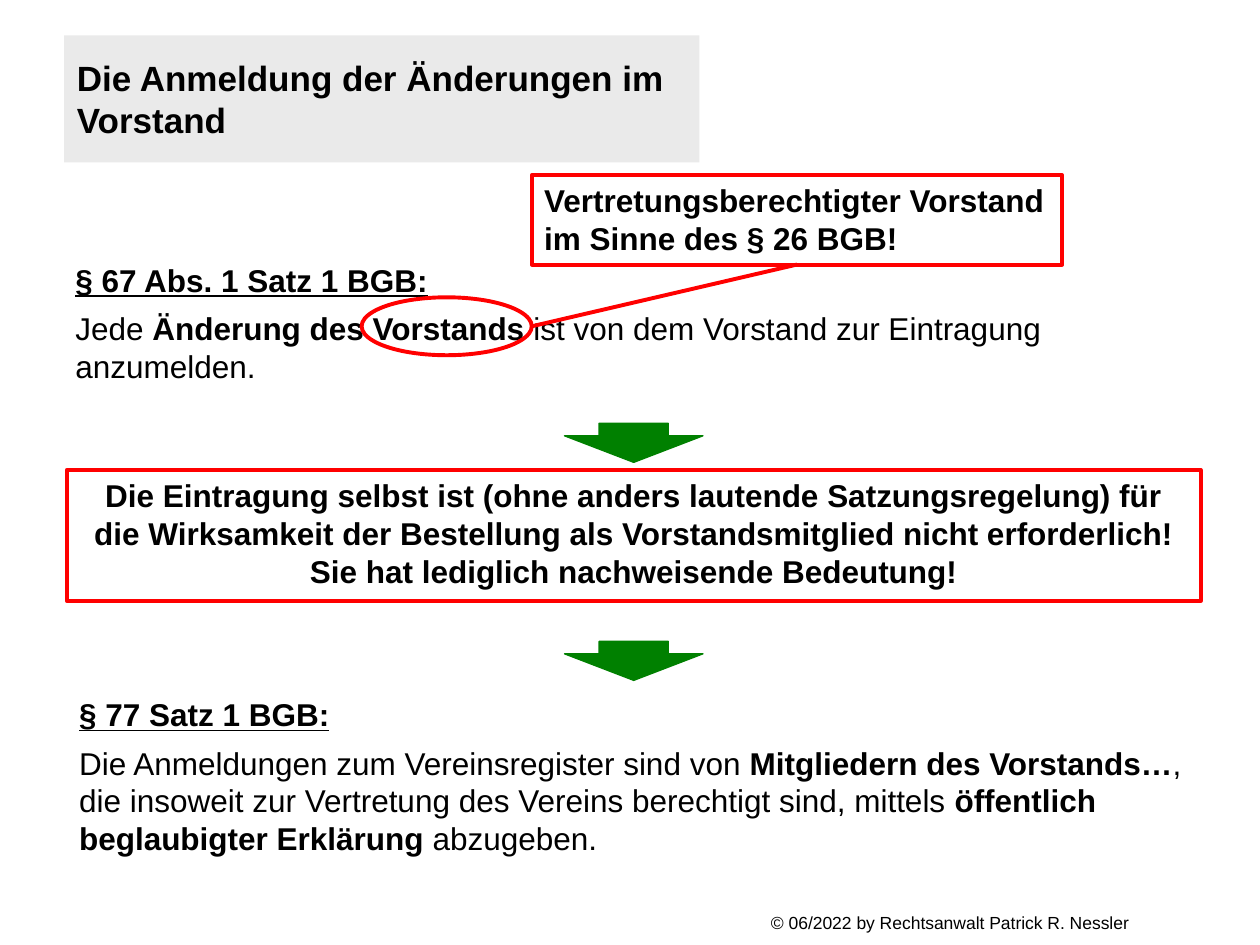
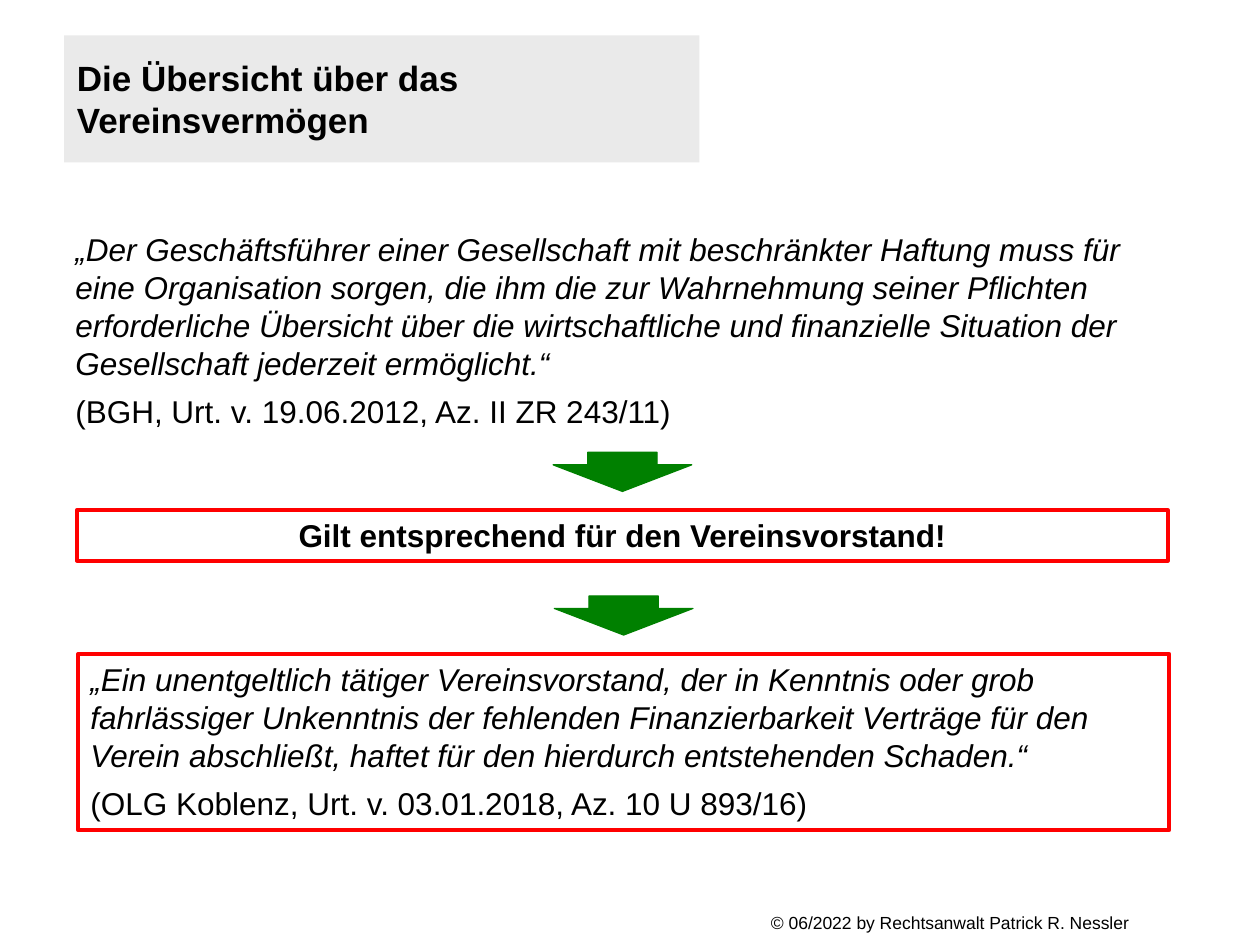
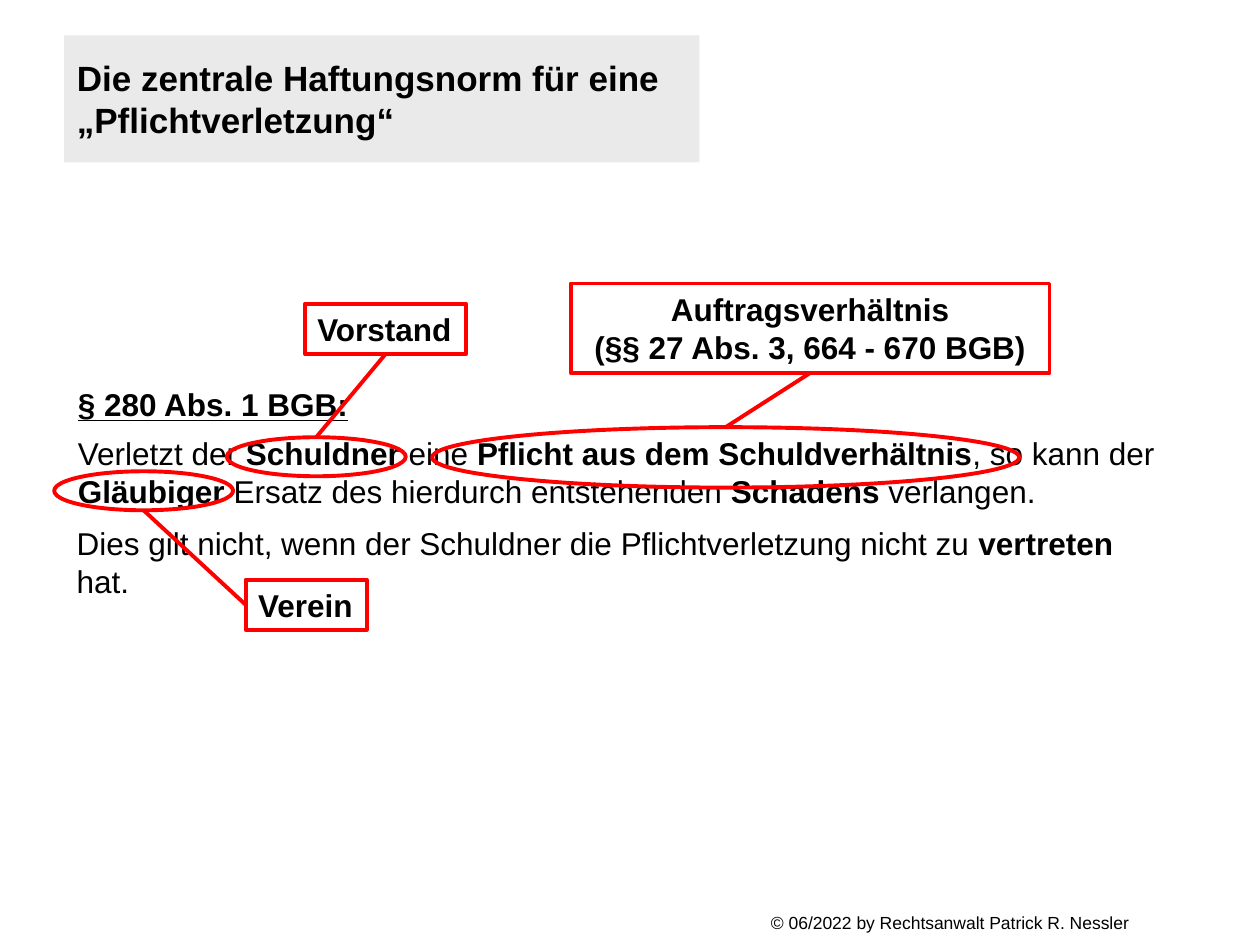
from dataclasses import dataclass

from lxml import etree
from pptx import Presentation
from pptx.dml.color import RGBColor
from pptx.enum.shapes import MSO_CONNECTOR, MSO_SHAPE
from pptx.enum.text import MSO_ANCHOR, MSO_AUTO_SIZE, PP_ALIGN
from pptx.oxml.ns import qn
from pptx.util import Inches, Pt

RECTANGLE, ELLIPSE, DOWN_ARROW = MSO_SHAPE.RECTANGLE, MSO_SHAPE.OVAL, MSO_SHAPE.DOWN_ARROW
STRAIGHT = MSO_CONNECTOR.STRAIGHT
LEFT, CENTER = PP_ALIGN.LEFT, PP_ALIGN.CENTER
TOP, MIDDLE = MSO_ANCHOR.TOP, MSO_ANCHOR.MIDDLE
NO_AUTOFIT = MSO_AUTO_SIZE.NONE
TITLE_ONLY = 5


@dataclass(frozen=True)
class Theme:
    font: str = "Arial"
    text: RGBColor = RGBColor(0, 0, 0)
    band: RGBColor = RGBColor(0xEA, 0xEA, 0xEA)
    accent: RGBColor = RGBColor(0xFF, 0, 0)
    arrow: RGBColor = RGBColor(0, 0x80, 0)
    title_size: int = 20
    body_size: int = 18
    footer_size: int = 10
    accent_width: float = 2.25
    arrow_width: float = 0.75
    paragraph_gap: int = 6


THEME = Theme()


@dataclass(frozen=True)
class Box:
    left: float
    top: float
    width: float
    height: float

    def inches(self):
        return [Inches(v) for v in (self.left, self.top, self.width, self.height)]

    def point(self, side):
        """Middle of one side of the box."""
        across, down = {"top": (0.5, 0), "bottom": (0.5, 1),
                        "left": (0, 0.5), "right": (1, 0.5)}[side]
        return self.left + across * self.width, self.top + down * self.height


TITLE_BOX = Box(0.51, 0.28, 5.04, 1.01)
FOOTER_BOX = Box(6.02, 7.19, 3.88, 0.27)
ARROW_WIDTH, ARROW_HEIGHT = 1.1, 0.31


# Text: a paragraph is a list of (text, styles) runs; styles are letters of "biu"
def write_text(frame, paragraphs, size=THEME.body_size, align=LEFT, anchor=TOP, wrap=True):
    frame.word_wrap = wrap
    frame.auto_size = NO_AUTOFIT
    frame.vertical_anchor = anchor
    for index, runs in enumerate(paragraphs):
        paragraph = frame.paragraphs[0] if index == 0 else frame.add_paragraph()
        paragraph.alignment = align
        paragraph.space_before = Pt(0)
        if index < len(paragraphs) - 1:
            paragraph.space_after = Pt(THEME.paragraph_gap)
        for text, styles in runs:
            for line_index, line in enumerate(text.split("\n")):
                if line_index:
                    paragraph.add_line_break()
                run = paragraph.add_run()
                run.text = line
                run.font.name = THEME.font
                run.font.size = Pt(size)
                run.font.color.rgb = THEME.text
                run.font.bold = "b" in styles
                run.font.italic = "i" in styles
                run.font.underline = "u" in styles


def add_text(slide, box, paragraphs, **options):
    write_text(slide.shapes.add_textbox(*box.inches()).text_frame, paragraphs, **options)


# Shapes
def add_outline(slide, kind, box):
    shape = slide.shapes.add_shape(kind, *box.inches())
    shape.shadow.inherit = False
    shape.fill.background()
    shape.line.color.rgb = THEME.accent
    shape.line.width = Pt(THEME.accent_width)
    return shape


def add_framed_text(slide, box, paragraphs, **options):
    write_text(add_outline(slide, RECTANGLE, box).text_frame, paragraphs, **options)


def add_arrow_above(slide, box, gap):
    """Down arrow centred over a box."""
    center, top = box.point("top")
    arrow_box = Box(center - ARROW_WIDTH / 2, top - gap - ARROW_HEIGHT,
                    ARROW_WIDTH, ARROW_HEIGHT)
    arrow = slide.shapes.add_shape(DOWN_ARROW, *arrow_box.inches())
    arrow.shadow.inherit = False
    arrow.adjustments[0] = 0.5
    arrow.adjustments[1] = 0.68
    arrow.fill.solid()
    arrow.fill.fore_color.rgb = THEME.arrow
    arrow.line.color.rgb = THEME.arrow
    arrow.line.width = Pt(THEME.arrow_width)


def add_callout(slide, term, term_side, label, label_side, text, **options):
    """Circle a term and join it to a framed label."""
    add_outline(slide, ELLIPSE, term)
    add_framed_text(slide, label, [[(text, "b")]], **options)
    ends = (*term.point(term_side), *label.point(label_side))
    connector = slide.shapes.add_connector(STRAIGHT, *[Inches(v) for v in ends])
    connector.line.color.rgb = THEME.accent
    connector.line.width = Pt(THEME.accent_width)
    etree.SubElement(connector._element.spPr, qn("a:effectLst"))


# Shared slide parts: title band and footer
def add_titled_slide(presentation, title):
    slide = presentation.slides.add_slide(presentation.slide_layouts[TITLE_ONLY])
    shape = slide.shapes.title
    shape.left, shape.top, shape.width, shape.height = TITLE_BOX.inches()
    shape.fill.solid()
    shape.fill.fore_color.rgb = THEME.band
    write_text(shape.text_frame, [[(title, "b")]], size=THEME.title_size, anchor=MIDDLE)
    add_text(slide, FOOTER_BOX, [[("© 06/2022 by Rechtsanwalt Patrick R. Nessler", "")]],
             size=THEME.footer_size)
    return slide


def build_registration_slide(presentation):
    slide = add_titled_slide(presentation, "Die Anmeldung der Änderungen im Vorstand")
    add_text(slide, Box(0.5, 2.02, 9, 1.18), [
        [("§ 67 Abs. 1 Satz 1 BGB:", "bu")],
        [("Jede ", ""), ("Änderung des Vorstands ", "b"),
         ("ist von dem Vorstand zur Eintragung anzumelden.", "")],
    ])

    # Effect of the entry
    effect = Box(0.53, 3.73, 9, 1.04)
    add_framed_text(slide, effect, [[(
        "Die Eintragung selbst ist (ohne anders lautende Satzungsregelung) für die "
        "Wirksamkeit der Bestellung als Vorstandsmitglied nicht erforderlich! "
        "Sie hat lediglich nachweisende Bedeutung!", "b")]], align=CENTER)
    add_arrow_above(slide, effect, 0.06)

    # Form of the application
    form = Box(0.53, 5.47, 9, 1.43)
    add_text(slide, form, [
        [("§ 77 Satz 1 BGB:", "bu")],
        [("Die Anmeldungen zum Vereinsregister sind von ", ""),
         ("Mitgliedern des Vorstands…", "b"),
         (", die insoweit zur Vertretung des Vereins berechtigt sind, mittels ", ""),
         ("öffentlich beglaubigter Erklärung ", "b"), ("abzugeben.", "")],
    ])
    add_arrow_above(slide, form, 0.07)

    add_callout(slide, Box(2.87, 2.36, 1.35, 0.46), "right",
                Box(4.22, 1.39, 4.21, 0.71), "bottom",
                "Vertretungsberechtigter Vorstand\nim Sinne des § 26 BGB!", wrap=False)


def build_assets_slide(presentation):
    slide = add_titled_slide(presentation, "Die Übersicht über das Vereinsvermögen")
    add_text(slide, Box(0.5, 1.78, 9, 1.47), [
        [("„Der Geschäftsführer einer Gesellschaft mit beschränkter Haftung muss für eine "
          "Organisation sorgen, die ihm die zur Wahrnehmung seiner Pflichten erforderliche "
          "Übersicht über die wirtschaftliche und finanzielle Situation der Gesellschaft "
          "jederzeit ermöglicht.“", "i")],
        [("(BGH, Urt. v. 19.06.2012, Az. II ZR 243/11)", "")],
    ])

    # Conclusion and liability ruling
    conclusion = Box(0.61, 4.05, 8.66, 0.4)
    add_framed_text(slide, conclusion,
                    [[("Gilt entsprechend für den Vereinsvorstand!", "b")]], align=CENTER)
    ruling = Box(0.62, 5.19, 8.66, 1.4)
    add_framed_text(slide, ruling, [
        [("„Ein unentgeltlich tätiger Vereinsvorstand, der in Kenntnis oder grob fahrlässiger "
          "Unkenntnis der fehlenden Finanzierbarkeit Verträge für den Verein abschließt, "
          "haftet für den hierdurch entstehenden Schaden.“", "i")],
        [("(OLG Koblenz, Urt. v. 03.01.2018, Az. 10 U 893/16)", "")],
    ])
    for box in (conclusion, ruling):
        add_arrow_above(slide, box, 0.15)


def build_liability_slide(presentation):
    slide = add_titled_slide(presentation,
                             "Die zentrale Haftungsnorm für eine „Pflichtverletzung“")
    add_text(slide, Box(0.52, 3.01, 8.83, 1.09), [
        [("§ 280 Abs. 1 BGB:", "bu")],
        [("Verletzt der ", ""), ("Schuldner ", "b"), ("eine ", ""),
         ("Pflicht aus dem Schuldverhältnis", "b"), (", so kann der ", ""),
         ("Gläubiger ", "b"), ("Ersatz des hierdurch entstehenden ", ""),
         ("Schadens ", "b"), ("verlangen.", "")],
    ])
    add_text(slide, Box(0.51, 4.11, 8.83, 0.71), [
        [("Dies gilt nicht, wenn der Schuldner die Pflichtverletzung nicht zu ", ""),
         ("vertreten", "b"), (" hat.", "")],
    ])

    # Terms of the norm and what they stand for
    add_callout(slide, Box(3.43, 3.39, 4.66, 0.48), "top",
                Box(4.53, 2.25, 3.8, 0.71), "bottom",
                "Auftragsverhältnis\n(§§ 27 Abs. 3, 664 - 670 BGB)", align=CENTER)
    add_callout(slide, Box(1.8, 3.47, 1.42, 0.31), "top",
                Box(2.42, 2.41, 1.28, 0.4), "bottom", "Vorstand", wrap=False)
    add_callout(slide, Box(0.43, 3.74, 1.42, 0.31), "bottom",
                Box(1.95, 4.6, 0.96, 0.4), "left", "Verein", wrap=False)


def main():
    presentation = Presentation()
    presentation.slide_width = Inches(10)
    presentation.slide_height = Inches(7.5)
    build_registration_slide(presentation)
    build_assets_slide(presentation)
    build_liability_slide(presentation)
    presentation.save("out.pptx")


if __name__ == "__main__":
    main()
